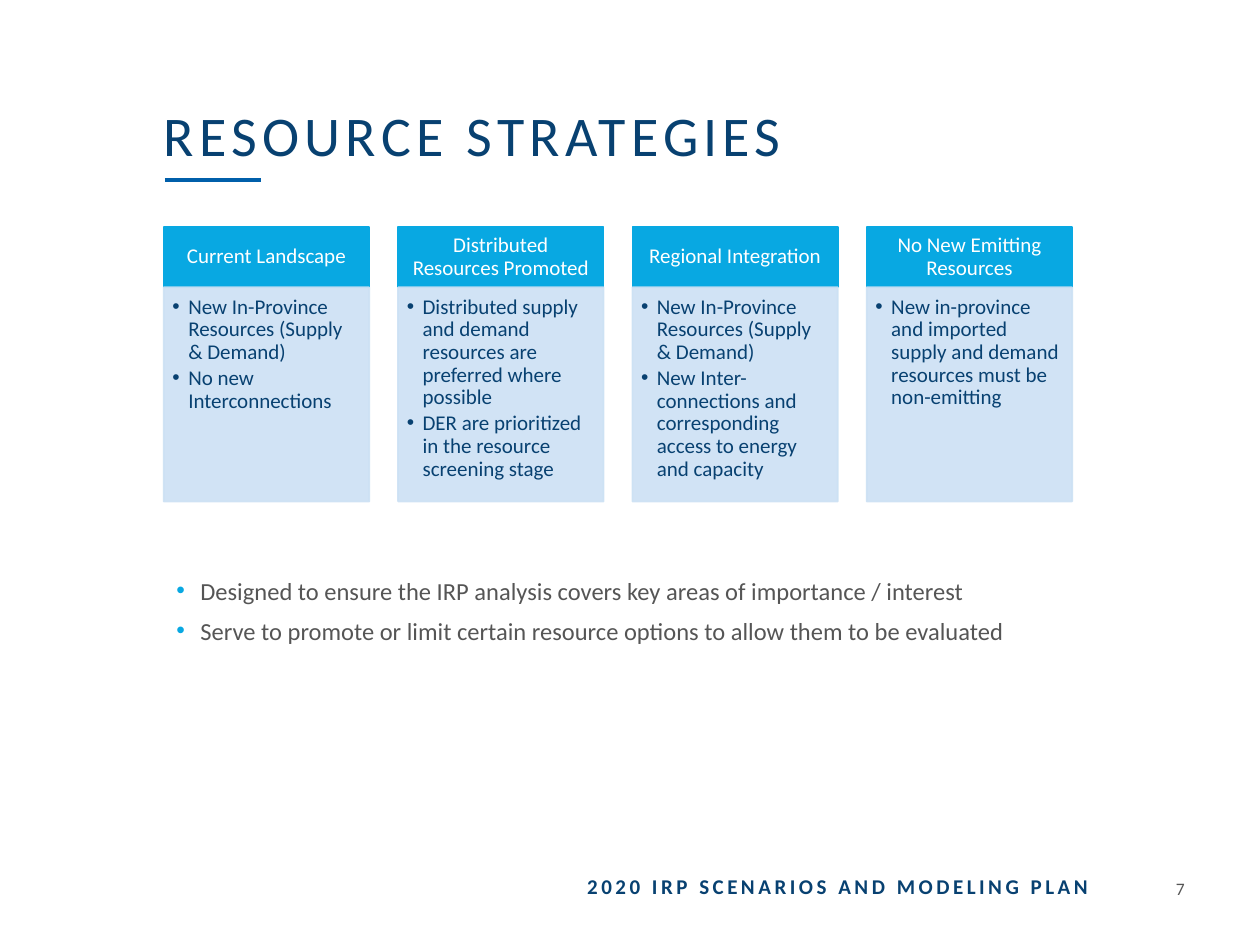
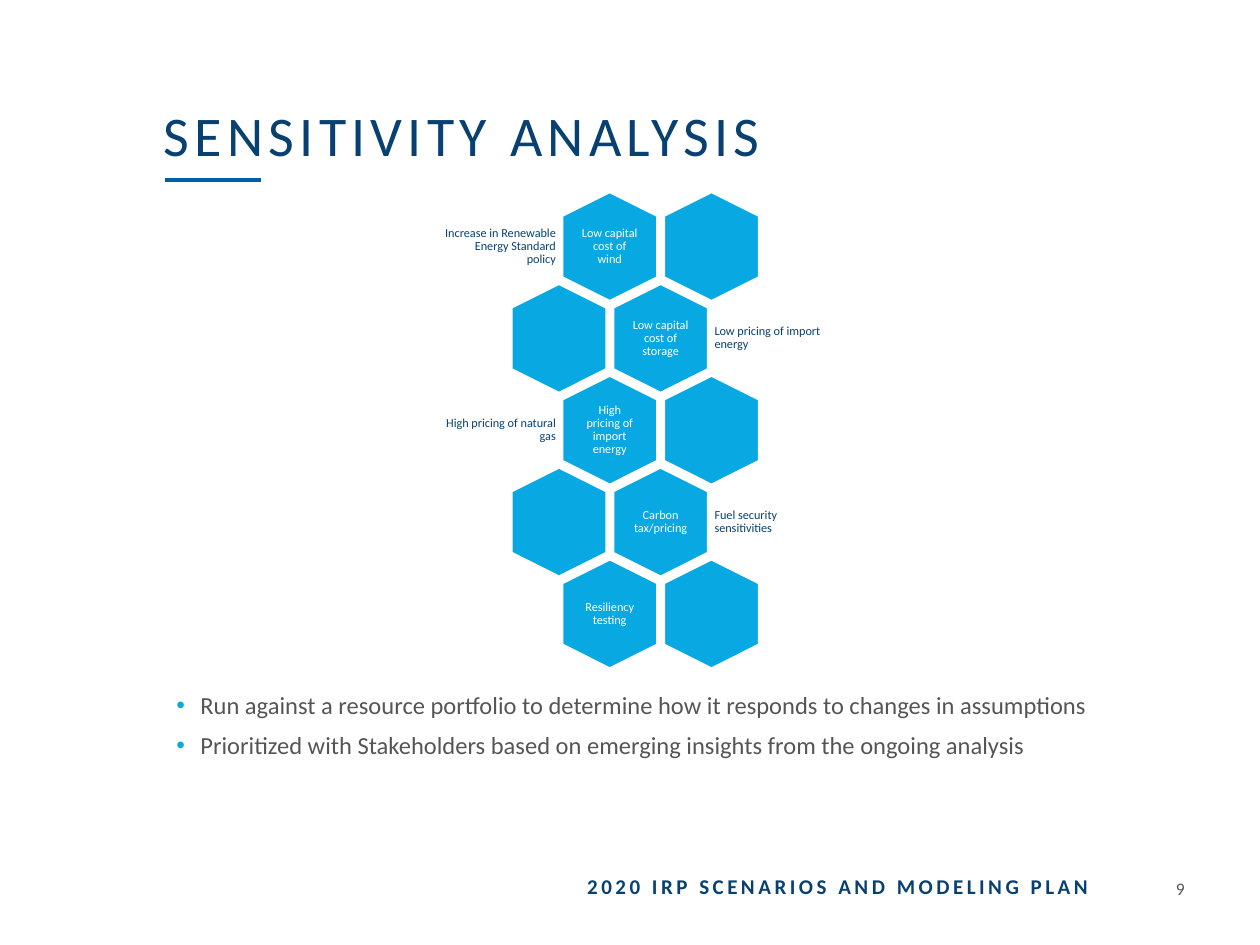
from lxml.etree import SubElement
from pptx import Presentation
from pptx.dml.color import RGBColor
from pptx.enum.shapes import MSO_CONNECTOR, MSO_SHAPE
from pptx.enum.text import MSO_ANCHOR as ANCHOR, MSO_AUTO_SIZE, PP_ALIGN as ALIGN
from pptx.oxml.ns import qn
from pptx.util import Pt

NAVY = RGBColor(0x08, 0x41, 0x71)
BLUE = RGBColor(0x00, 0x5F, 0xAA)
CYAN = RGBColor(0x08, 0xA8, 0xE2)
PALE = RGBColor(0xCC, 0xE1, 0xF4)
GRAY = RGBColor(0x55, 0x55, 0x55)
WHITE = RGBColor(0xFF, 0xFF, 0xFF)

FONT = "Calibri"
LEFT = 93.6
FOOTER = "2020 IRP SCENARIOS AND MODELING PLAN"
TITLE_BOX = (LEFT, 20.9, 532.8, 75.6)
FOOTER_BOX = (268.6, 495.4, 360.7, 24.5)
NUMBER_BOX = (647.3, 495.4, 36.7, 24.5)

STRATEGIES = [
    ("Current Landscape",
     ["New In-Province Resources (Supply & Demand)",
      "No new Interconnections"]),
    ("Distributed Resources Promoted",
     ["Distributed supply and demand resources are preferred where possible",
      "DER are prioritized in the resource screening stage"]),
    ("Regional Integration",
     ["New In-Province Resources (Supply & Demand)",
      "New Inter-connections and corresponding access to energy and capacity"]),
    ("No New Emitting Resources",
     ["New in-province and imported supply and demand resources must be non-emitting"]),
]
STRATEGY_NOTES = [
    "Designed to ensure the IRP analysis covers key areas of importance / interest",
    "Serve to promote or limit certain resource options to allow them to be evaluated",
]
SENSITIVITIES = [
    ("Low capital cost of wind", "Increase in Renewable Energy Standard policy"),
    ("Low capital cost of storage", "Low pricing of import energy"),
    ("High pricing of import energy", "High pricing of natural gas"),
    ("Carbon tax/pricing", "Fuel security sensitivities"),
    ("Resiliency testing", None),
]
SENSITIVITY_NOTES = [
    "Run against a resource portfolio to determine how it responds to changes in assumptions",
    "Prioritized with Stakeholders based on emerging insights from the ongoing analysis",
]


def apply(obj, values):
    for name, value in values.items():
        setattr(obj, name, value)


def pts(box):
    return [Pt(v) for v in box]


def place(sp, box):
    apply(sp, dict(zip(("left", "top", "width", "height"), pts(box))))


def add_bullet(p, indent, color):
    pPr = p._p.get_or_add_pPr()
    pPr.set("marL", str(Pt(indent)))
    pPr.set("indent", str(-Pt(indent)))
    clr = SubElement(pPr, qn("a:buClr"))
    SubElement(clr, qn("a:srgbClr")).set("val", str(color))
    SubElement(pPr, qn("a:buFont")).set("typeface", "Arial")
    SubElement(pPr, qn("a:buChar")).set("char", "•")


def write(sp, lines, size, color, align=ALIGN.LEFT, anchor=ANCHOR.TOP,
          insets=(7.2, 3.6, 7.2, 3.6), leading=1.0, after=0, bold=False,
          tracking=0, indent=0, bullet_color=None):
    tf = sp.text_frame
    apply(tf, {"word_wrap": True, "auto_size": MSO_AUTO_SIZE.NONE,
               "vertical_anchor": anchor})
    sides = ("margin_left", "margin_top", "margin_right", "margin_bottom")
    apply(tf, dict(zip(sides, pts(insets))))
    for i, line in enumerate(lines):
        p = tf.paragraphs[0] if i == 0 else tf.add_paragraph()
        apply(p, {"alignment": align, "line_spacing": leading,
                  "space_before": Pt(0), "space_after": Pt(after)})
        if indent:
            add_bullet(p, indent, bullet_color or color)
        r = p.add_run()
        r.text = line
        apply(r.font, {"name": FONT, "size": Pt(size), "bold": bold})
        r.font.color.rgb = color
        if tracking:
            r._r.get_or_add_rPr().set("spc", str(tracking * 100))


def add_text(slide, box, lines, size, color, **style):
    sp = slide.shapes.add_textbox(*pts(box))
    write(sp, lines, size, color, **style)
    return sp


def add_filled(slide, kind, box, fill, line):
    sp = slide.shapes.add_shape(kind, *pts(box))
    sp.shadow.inherit = False
    sp.fill.solid()
    sp.fill.fore_color.rgb = fill
    sp.line.color.rgb = line
    sp.line.width = Pt(1)
    return sp


def add_base(prs, title, number):
    slide = prs.slides.add_slide(prs.slide_layouts[1])
    rule = slide.shapes.add_connector(
        MSO_CONNECTOR.STRAIGHT, *pts((94.3, 103, 149, 103)))
    rule.line.color.rgb = BLUE
    rule.line.width = Pt(2)
    SubElement(rule._element.spPr, qn("a:effectLst"))
    place(slide.shapes.title, TITLE_BOX)
    write(slide.shapes.title, [title], 32, NAVY, anchor=ANCHOR.BOTTOM,
          insets=(0, 0, 0, 0), leading=0.9, tracking=3)
    add_text(slide, NUMBER_BOX, [str(number)], 10, GRAY, align=ALIGN.RIGHT,
             anchor=ANCHOR.MIDDLE, tracking=3)
    add_text(slide, FOOTER_BOX, [FOOTER], 12, NAVY, align=ALIGN.RIGHT,
             bold=True, tracking=2)
    return slide


def add_notes_list(slide, box, notes):
    body = slide.placeholders[1]
    place(body, box)
    write(body, notes, 14, GRAY, insets=(7.2, 20.7, 7.2, 3.6), after=6,
          indent=13.7, bullet_color=CYAN)


def add_strategy_cards(slide, box, gap=16.5, head_h=34.6):
    left, top, width, height = box
    card_w = (width - gap * (len(STRATEGIES) - 1)) / len(STRATEGIES)
    for i, (name, points) in enumerate(STRATEGIES):
        x = left + i * (card_w + gap)
        head = add_filled(slide, MSO_SHAPE.RECTANGLE, (x, top, card_w, head_h), CYAN, CYAN)
        write(head, [name], 12, WHITE, align=ALIGN.CENTER, anchor=ANCHOR.MIDDLE,
              insets=(6.4, 3.6, 6.4, 3.6), leading=0.9)
        panel = add_filled(slide, MSO_SHAPE.RECTANGLE,
                           (x, top + head_h, card_w, height - head_h), PALE, PALE)
        for clr in panel._element.spPr.iter(qn("a:srgbClr")):
            SubElement(clr, qn("a:alpha")).set("val", "90000")
        write(panel, points, 12, NAVY, insets=(5, 5, 6.4, 7), leading=0.9,
              after=1.8, indent=9)


def add_honeycomb(slide, box):
    left, top, width, height = box
    hex_w, hex_h = 54, 62
    step_x = (width - hex_w) / 2.5
    step_y = (height - hex_h) / (len(SENSITIVITIES) - 1)
    label_w, label_h, label_gap = 68, 36.7, 28.6
    style = {"anchor": ANCHOR.MIDDLE, "insets": (2.2, 2.2, 2.2, 2.2), "leading": 0.9}
    for row, (name, label) in enumerate(SENSITIVITIES):
        odd = row % 2
        first = left + hex_w / 2 + (0 if odd else step_x / 2)
        cy = top + hex_h / 2 + row * step_y
        for cx in (first, first + step_x):
            cell = add_filled(slide, MSO_SHAPE.HEXAGON,
                              (cx - hex_h / 2, cy - hex_w / 2, hex_h, hex_w), CYAN, WHITE)
            cell.rotation = 90
        named_x = first + step_x * odd
        add_text(slide, (named_x - 18.4, cy - 21.2, 36.8, 42.4), [name], 7, WHITE,
                 align=ALIGN.CENTER, **style)
        if label:
            x = named_x + label_gap if odd else named_x - label_gap - label_w
            add_text(slide, (x, cy - label_h / 2, label_w, label_h), [label], 7, NAVY,
                     align=ALIGN.LEFT if odd else ALIGN.RIGHT, **style)


def strategies_slide(prs):
    slide = add_base(prs, "RESOURCE STRATEGIES", 7)
    add_strategy_cards(slide, (LEFT, 129.6, 519.1, 157))
    add_notes_list(slide, (LEFT, 308.2, 519.8, 144.7), STRATEGY_NOTES)


def sensitivity_slide(prs):
    slide = add_base(prs, "SENSITIVITY ANALYSIS", 9)
    add_notes_list(slide, (LEFT, 373.7, 535.7, 80.6), SENSITIVITY_NOTES)
    add_honeycomb(slide, (292.4, 109.9, 199.2, 271.9))


def main():
    prs = Presentation()
    prs.slide_width, prs.slide_height = Pt(720), Pt(540)
    strategies_slide(prs)
    sensitivity_slide(prs)
    prs.save("out.pptx")


if __name__ == "__main__":
    main()
